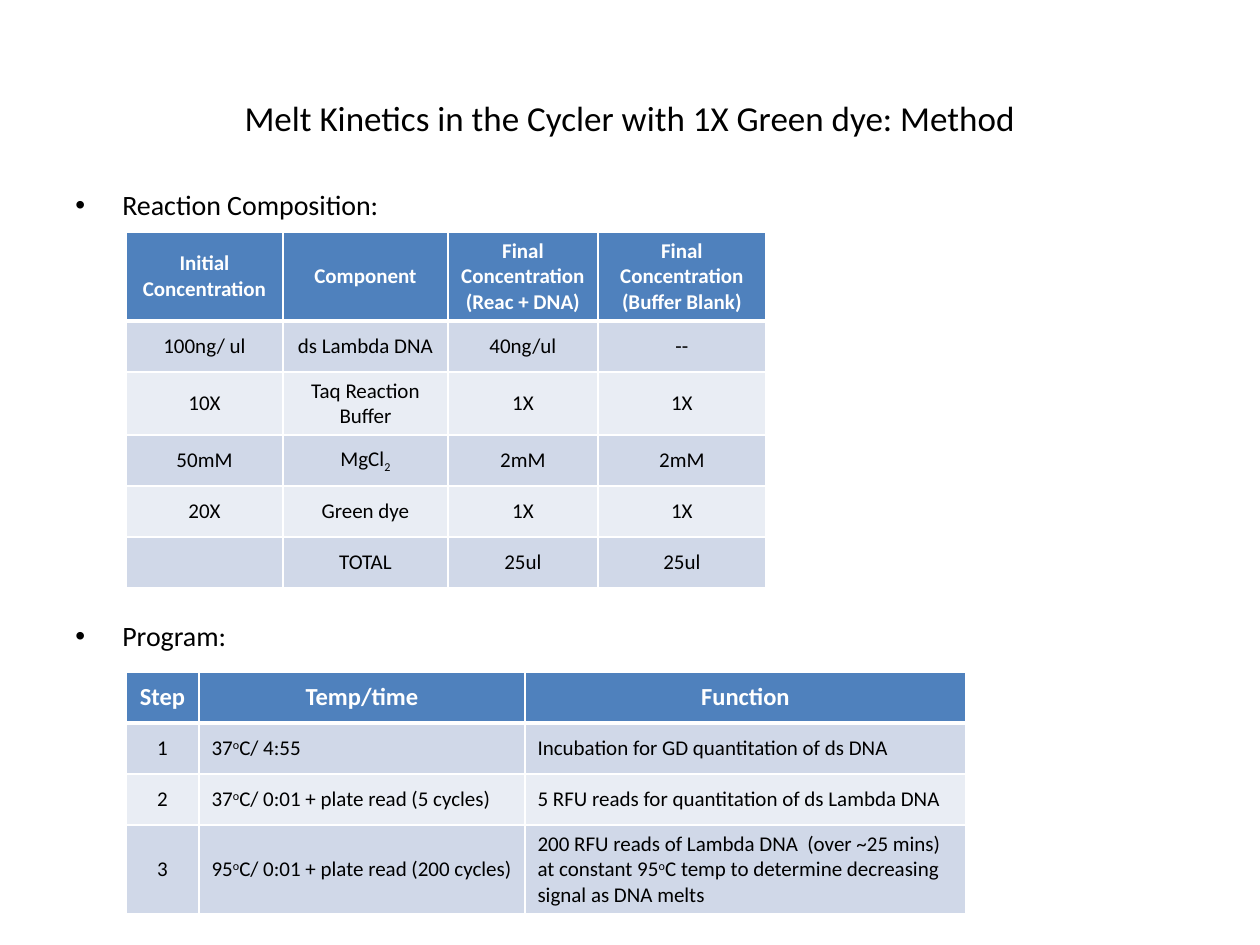
from collections import namedtuple
from dataclasses import dataclass

from lxml.etree import SubElement
from pptx import Presentation
from pptx.dml.color import RGBColor as RGB
from pptx.enum.text import MSO_ANCHOR as Anchor, PP_ALIGN as Align
from pptx.oxml.ns import qn
from pptx.util import Emu, Pt

Box = namedtuple("Box", "left top width height")


@dataclass(frozen=True)
class Theme:
    font: str = "Calibri"
    ink: str = "000000"
    white: str = "FFFFFF"
    header: str = "4F81BD"
    bands: tuple = ("D0D8E8", "E9EDF4")
    title_size: int = 20
    body_size: int = 16
    step_size: int = 14
    cell_size: int = 12
    thin_rule: int = 1
    header_rule: int = 3


THEME = Theme()
BASELINES = {"^": "30000", "_": "-25000"}

REACTION = [
    ["Initial Concentration", "Component",
     "Final Concentration\n(Reac + DNA)", "Final Concentration\n(Buffer Blank)"],
    ["100ng/ ul", "ds Lambda DNA", "40ng/ul", "--"],
    ["10X", "Taq Reaction Buffer", "1X", "1X"],
    ["50mM", "MgCl|_2", "2mM", "2mM"],
    ["20X", "Green dye", "1X", "1X"],
    ["", "TOTAL", "25ul", "25ul"],
]
PROGRAM = [
    ["Step", "Temp/time", "Function"],
    ["1", "37|^o|C/ 4:55", "Incubation for GD quantitation of ds DNA"],
    ["2", "37|^o|C/ 0:01 + plate read (5 cycles)",
     "5 RFU reads for quantitation of ds Lambda DNA"],
    ["3", "95|^o|C/ 0:01 + plate read (200 cycles)",
     "200 RFU reads of Lambda DNA  (over ~25 mins) at constant 95|^o|C"
     " temp to determine decreasing signal as DNA melts"],
]


def px(count):
    return Emu(round(count * 914400 / 126))


def apply(target, values):
    for name, value in values.items():
        setattr(target, name, value)


def write(paragraph, text, size, color, bold=False, **layout):
    apply(paragraph, layout)
    for part in filter(None, text.split("|")):
        run = paragraph.add_run()
        run.text = part.lstrip("^_")
        apply(run.font, {"name": THEME.font, "size": Pt(size), "bold": bold})
        run.font.color.rgb = RGB.from_string(color)
        if part[0] in BASELINES:
            run._r.get_or_add_rPr().set("baseline", BASELINES[part[0]])


def add_frame(slide, box, **settings):
    frame = slide.shapes.add_textbox(*map(px, box)).text_frame
    apply(frame, {"word_wrap": True, **settings})
    return frame


def add_title(slide, box, text):
    frame = add_frame(slide, box, vertical_anchor=Anchor.MIDDLE)
    write(frame.paragraphs[0], text, THEME.title_size, THEME.ink,
          alignment=Align.CENTER)


def add_headings(slide, box, headings):
    frame = add_frame(slide, box, margin_top=px(8))
    for index, (text, gap) in enumerate(headings):
        paragraph = frame.add_paragraph() if index else frame.paragraphs[0]
        write(paragraph, text, THEME.body_size, THEME.ink, space_before=Pt(gap))
        properties = paragraph._p.get_or_add_pPr()
        properties.set("marL", str(px(47)))
        properties.set("indent", str(-px(47)))
        SubElement(properties, qn("a:buFont"), typeface="Arial")
        SubElement(properties, qn("a:buChar"), char="•")


def add_borders(cell, row):
    widths = {"L": THEME.thin_rule, "R": THEME.thin_rule,
              "T": THEME.header_rule if row == 1 else THEME.thin_rule,
              "B": THEME.header_rule if row == 0 else THEME.thin_rule}
    properties = cell._tc.get_or_add_tcPr()
    for side, width in widths.items():
        line = SubElement(properties, qn(f"a:ln{side}"), w=str(Pt(width)))
        fill = SubElement(line, qn("a:solidFill"))
        SubElement(fill, qn("a:srgbClr"), val=THEME.white)


def add_grid(slide, origin, widths, heights, rows, header_size, left_columns=()):
    box = Box(*origin, sum(widths), sum(heights))
    table = slide.shapes.add_table(len(rows), len(widths), *map(px, box)).table
    for column, width in zip(table.columns, widths):
        column.width = px(width)
    for r, (texts, height) in enumerate(zip(rows, heights)):
        table.rows[r].height = px(height)
        fill = THEME.bands[(r - 1) % 2] if r else THEME.header
        size, color = (THEME.cell_size, THEME.ink) if r else (header_size, THEME.white)
        for c, text in enumerate(texts):
            cell = table.cell(r, c)
            cell.vertical_anchor = Anchor.MIDDLE
            add_borders(cell, r)
            cell.fill.solid()
            cell.fill.fore_color.rgb = RGB.from_string(fill)
            align = Align.LEFT if r and c in left_columns else Align.CENTER
            for index, line in enumerate(text.split("\n")):
                frame = cell.text_frame
                paragraph = frame.add_paragraph() if index else frame.paragraphs[0]
                write(paragraph, line, size, color, bold=r == 0, alignment=align)


def add_method_slide(deck):
    slide = deck.slides.add_slide(deck.slide_layouts[6])
    add_title(slide, Box(63, 38, 1134, 158),
              "Melt Kinetics in the Cycler with 1X Green dye: Method")
    add_headings(slide, Box(63, 180, 1134, 624),
                 [("Reaction Composition:", 0), ("Program:", 227)])
    add_grid(slide, (126, 232), (157, 165, 150, 168), (89, 51, 63, 51, 51, 51),
             REACTION, THEME.cell_size)
    add_grid(slide, (126, 672), (73, 326, 441), (51, 51, 51, 89),
             PROGRAM, THEME.step_size, left_columns=(1, 2))


def main():
    deck = Presentation()
    apply(deck, {"slide_width": px(1260), "slide_height": px(945)})
    add_method_slide(deck)
    deck.save("out.pptx")


if __name__ == "__main__":
    main()
